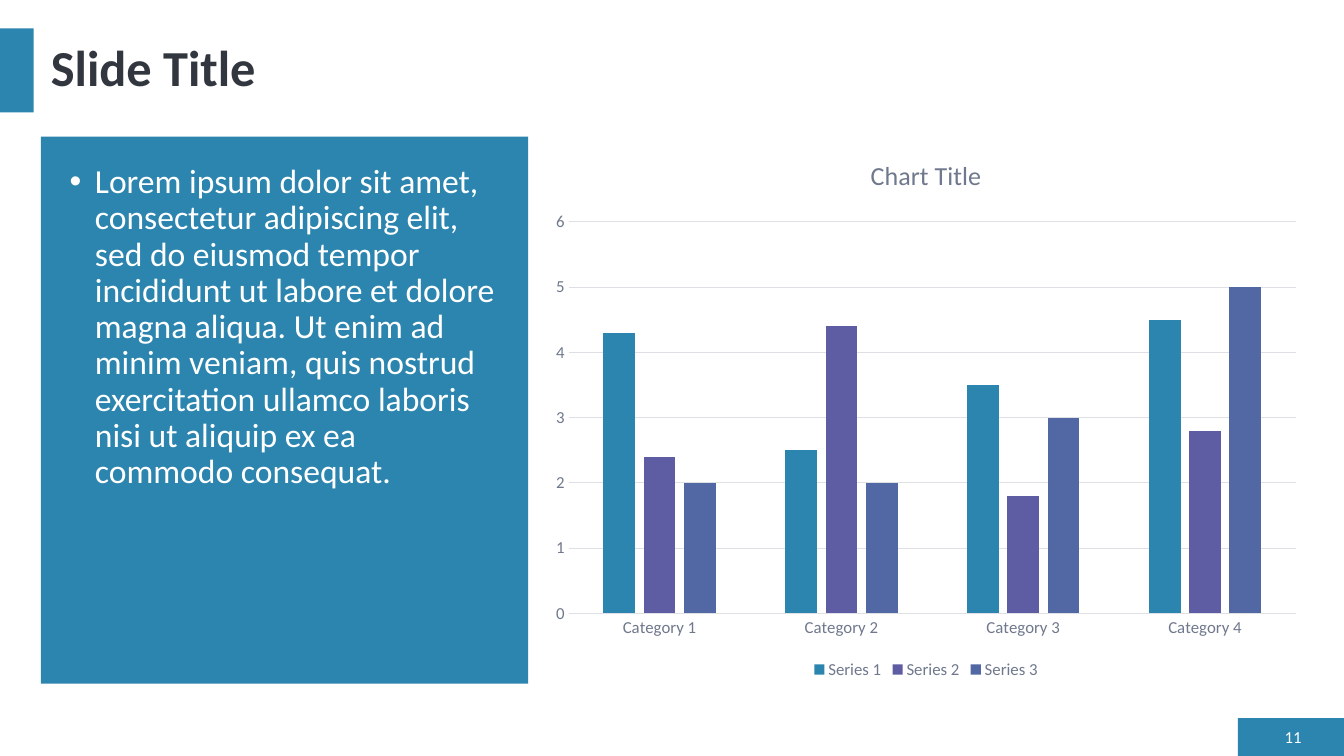
from lxml import etree
from pptx import Presentation
from pptx import util as u
from pptx.chart.data import CategoryChartData
from pptx.dml.color import RGBColor
from pptx.enum import chart as charts, shapes, text
from pptx.oxml.ns import qn

# Content
TITLE = "Slide Title"
BODY = (
    "Lorem ipsum dolor sit amet, consectetur adipiscing elit, sed do eiusmod "
    "tempor incididunt ut labore et dolore magna aliqua. Ut enim ad minim veniam, "
    "quis nostrud exercitation ullamco laboris nisi ut aliquip ex ea commodo consequat."
)
PAGE_NUMBER = "11"
CHART_TITLE = "Chart Title"
CATEGORIES = ["Category 1", "Category 2", "Category 3", "Category 4"]

# Colours and font
BLUE = RGBColor(0x2C, 0x85, 0xAE)
PURPLE = RGBColor(0x5E, 0x5C, 0xA2)
INDIGO = RGBColor(0x52, 0x68, 0xA5)
DARK = RGBColor(0x32, 0x36, 0x3F)
GREY = RGBColor(0x6F, 0x78, 0x8C)
PALE = RGBColor(0xDE, 0xE0, 0xE5)
WHITE = RGBColor(0xFF, 0xFF, 0xFF)
FONT = "Calibri"

SERIES = [
    ("Series 1", (4.3, 2.5, 3.5, 4.5), BLUE),
    ("Series 2", (2.4, 4.4, 1.8, 2.8), PURPLE),
    ("Series 3", (2, 2, 3, 5), INDIGO),
]

# Layout in px, 96 to the inch
PX = 9525
WIDTH, HEIGHT = 1280, 720
MARGIN = 39
RIGHT = 1249
TITLE_TOP, TITLE_HEIGHT = 27, 80
PANEL_TOP, PANEL_WIDTH, PANEL_HEIGHT = 130, 464, 521
PADDING_X, PADDING_Y = 18, 22
CHART_LEFT = 515
FOOTER_LEFT, FOOTER_TOP = 1179, 684
NUMBER_LEFT, NUMBER_TOP, NUMBER_HEIGHT = 1210, 691, 22

PANELS = [
    (FOOTER_LEFT, FOOTER_TOP, WIDTH - FOOTER_LEFT, HEIGHT - FOOTER_TOP),
    (0, TITLE_TOP, 32, TITLE_HEIGHT),
    (MARGIN, PANEL_TOP, PANEL_WIDTH, PANEL_HEIGHT),
]


def scaled(*lengths):
    return [length * PX for length in lengths]


def style(font, size, color, bold=False):
    font.name = FONT
    font.size = u.Pt(size)
    font.bold = bold
    font.color.rgb = color


def add_text(slide, box, words, size, color, bold=False, anchor=text.MSO_ANCHOR.MIDDLE):
    frame = slide.shapes.add_textbox(*scaled(*box)).text_frame
    frame.word_wrap = True
    frame.vertical_anchor = anchor
    frame.text = words
    paragraph = frame.paragraphs[0]
    style(paragraph.runs[0].font, size, color, bold)
    return paragraph


def add_bullet(paragraph, indent):
    properties = paragraph._p.get_or_add_pPr()
    properties.set("marL", str(indent * PX))
    properties.set("indent", str(-indent * PX))
    etree.SubElement(properties, qn("a:buFont")).set("typeface", "Arial")
    etree.SubElement(properties, qn("a:buChar")).set("char", "•")


def add_column_chart(slide, box):
    data = CategoryChartData()
    data.categories = CATEGORIES
    for name, values, _ in SERIES:
        data.add_series(name, values)
    chart = slide.shapes.add_chart(
        charts.XL_CHART_TYPE.COLUMN_CLUSTERED, *scaled(*box), data).chart
    style(chart.font, 12, GREY)

    # Title and legend
    chart.has_title = True
    chart.chart_title.include_in_layout = False
    chart.chart_title.text_frame.text = CHART_TITLE
    style(chart.chart_title.text_frame.paragraphs[0].runs[0].font, 18.6, GREY)
    chart.has_legend = True
    chart.legend.position = charts.XL_LEGEND_POSITION.BOTTOM
    chart.legend.include_in_layout = False
    style(chart.legend.font, 12, GREY)

    # Axes
    for axis in (chart.category_axis, chart.value_axis):
        axis.major_tick_mark = axis.minor_tick_mark = charts.XL_TICK_MARK.NONE
        style(axis.tick_labels.font, 12, GREY)
    chart.value_axis.format.line.fill.background()
    chart.value_axis.has_major_gridlines = True
    for line in (chart.category_axis.format.line,
                 chart.value_axis.major_gridlines.format.line):
        line.color.rgb = PALE
        line.width = u.Pt(0.75)

    # Columns
    plot = chart.plots[0]
    plot.vary_by_categories = False
    plot.gap_width = 219
    plot.overlap = -27
    for series, (_, _, color) in zip(plot.series, SERIES):
        series.format.fill.solid()
        series.format.fill.fore_color.rgb = color


def main():
    presentation = Presentation()
    presentation.slide_width, presentation.slide_height = scaled(WIDTH, HEIGHT)
    slide = presentation.slides.add_slide(presentation.slide_layouts[6])

    # Blue panels
    for box in PANELS:
        panel = slide.shapes.add_shape(shapes.MSO_SHAPE.RECTANGLE, *scaled(*box))
        panel.shadow.inherit = False
        panel.fill.solid()
        panel.fill.fore_color.rgb = BLUE
        panel.line.fill.background()

    # Title and page number
    title_box = (MARGIN, TITLE_TOP, RIGHT - MARGIN, TITLE_HEIGHT)
    add_text(slide, title_box, TITLE, 36, DARK, bold=True).line_spacing = 0.9
    number_box = (NUMBER_LEFT, NUMBER_TOP, RIGHT - NUMBER_LEFT, NUMBER_HEIGHT)
    add_text(slide, number_box, PAGE_NUMBER, 12, WHITE).alignment = text.PP_ALIGN.RIGHT

    # Chart
    add_column_chart(slide, (CHART_LEFT, PANEL_TOP, RIGHT - CHART_LEFT, PANEL_HEIGHT))

    # Body text inside the large panel
    body_box = (MARGIN + PADDING_X, PANEL_TOP + PADDING_Y,
                PANEL_WIDTH - 2 * PADDING_X, PANEL_HEIGHT - 2 * PADDING_Y)
    body = add_text(slide, body_box, BODY, 24, WHITE, anchor=text.MSO_ANCHOR.TOP)
    add_bullet(body, 24)
    body.line_spacing = 0.9

    presentation.save("out.pptx")


if __name__ == "__main__":
    main()
